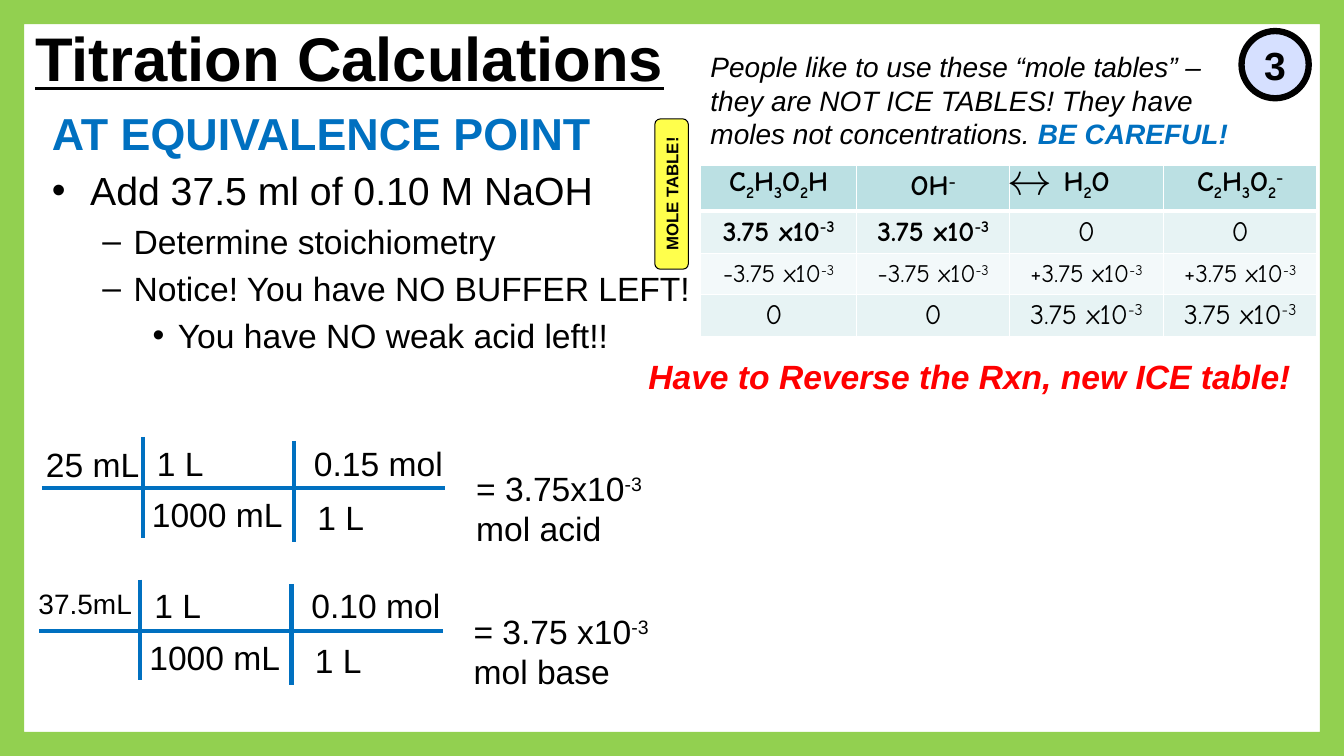
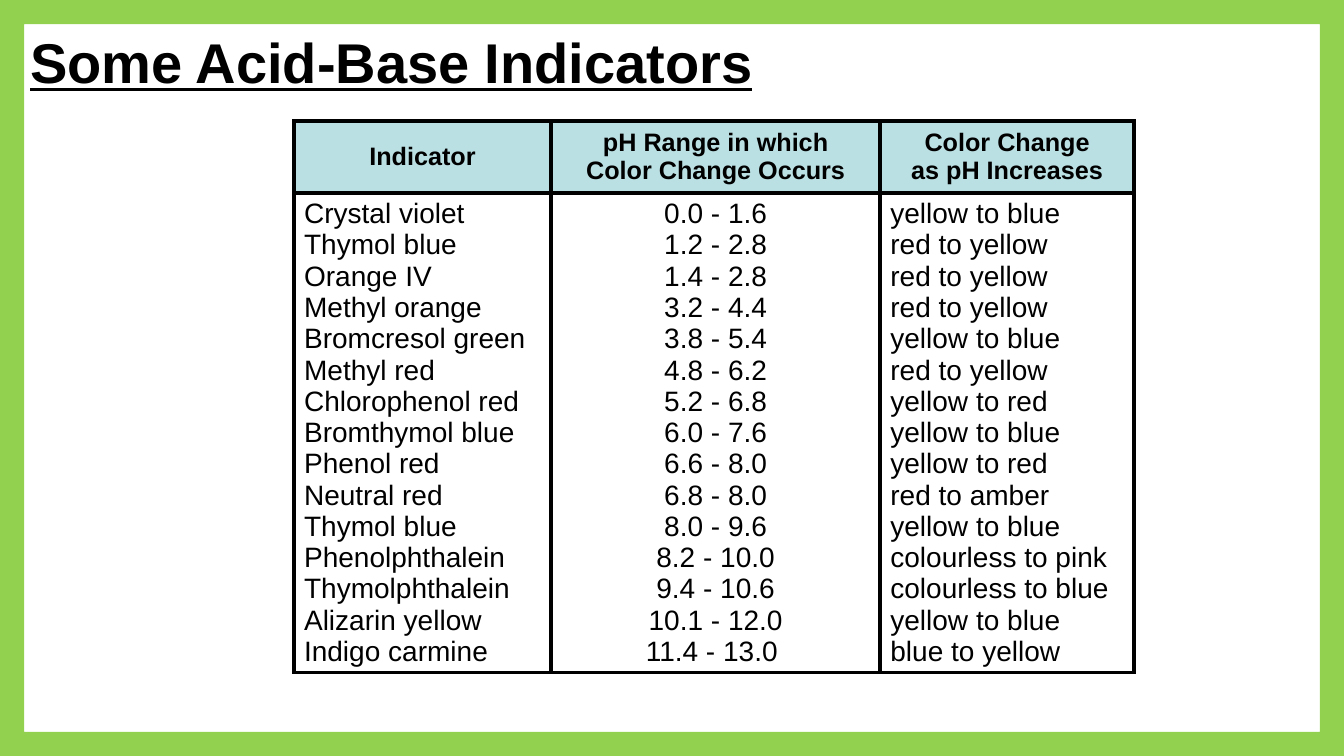
from lxml import etree
from pptx import Presentation
from pptx import util as u
from pptx.dml.color import RGBColor
from pptx.enum import shapes, text
from pptx.oxml.ns import qn

GREEN = RGBColor(0x92, 0xD0, 0x50)
BLUE = RGBColor(0x00, 0x70, 0xC0)
TEAL = RGBColor(0xBB, 0xE0, 0xE3)
PALE = RGBColor(0xE7, 0xF3, 0xF4)
PALER = RGBColor(0xF3, 0xF9, 0xFA)
LILAC = RGBColor(0xD6, 0xE0, 0xFF)
YELLOW = RGBColor(0xFF, 0xFF, 0x00)
RED = RGBColor(0xFF, 0x00, 0x00)
BLACK = RGBColor(0x00, 0x00, 0x00)
WHITE = RGBColor(0xFF, 0xFF, 0xFF)

CENTER = text.PP_ALIGN.CENTER
MIDDLE = text.MSO_ANCHOR.MIDDLE
TOP = text.MSO_ANCHOR.TOP
BASELINES = {"_": "-25000", "^": "30000"}

deck = Presentation()
deck.slide_width, deck.slide_height = u.Inches(13.333), u.Inches(7.5)
CELL = deck.slide_height / 90


def write(para, content, size, color=BLACK, name="Arial", **style):
    for index, piece in enumerate(content.split("~")):
        shift = BASELINES[piece[0]] if index % 2 else None
        for number, line in enumerate((piece[1:] if shift else piece).split("\n")):
            if number:
                para.add_line_break()
            if not line:
                continue
            span = para.add_run()
            span.text = line
            for key, value in {"size": u.Pt(size), "name": name, **style}.items():
                setattr(span.font, key, value)
            span.font.color.rgb = color
            if shift:
                span._r.get_or_add_rPr().set("baseline", shift)


def place(page, area, kind=None, fill=None, line=None):
    lengths = [round(cells * CELL) for cells in area]
    if kind is None:
        box = page.shapes.add_textbox(*lengths)
    else:
        box = page.shapes.add_shape(kind, *lengths)
        box.shadow.inherit = False
        box.fill.solid()
        box.fill.fore_color.rgb = fill
        if line:
            box.line.color.rgb, box.line.width = BLACK, u.Pt(line)
        else:
            box.line.fill.background()
    box.text_frame.word_wrap = True
    return box


titles = [
    ("Titration Calculations", 44, (3, 2.6, 108, 8.4)),
    ("Some Acid-Base Indicators", 40, (2.4, 2.3, 109, 10)),
]
pages = []
for title, size, area in titles:
    page = deck.slides.add_slide(deck.slide_layouts[6])
    frame = place(page, (0, 0, 160, 90), shapes.MSO_SHAPE.FRAME, GREEN)
    frame.adjustments[0] = 0.032
    heading = place(page, area).text_frame
    heading.vertical_anchor = MIDDLE
    write(heading.paragraphs[0], title, size, bold=True, underline=True)
    pages.append(page)
titration, indicators = pages

outline = [
    ("AT EQUIVALENCE POINT", 32, {"color": BLUE, "bold": True}, None),
    ("Add 37.5 ml of 0.10 M NaOH", 28, {}, (0, 0.38, 0.38, "•")),
    ("Determine stoichiometry", 24, {}, (1, 0.81, 0.31, "–")),
    ("Notice! You have NO BUFFER LEFT!", 24, {}, (1, 0.81, 0.31, "–")),
    ("You have NO weak acid left!!", 24, {}, (2, 1.25, 0.25, "•")),
]
body = place(titration, (5, 12, 129, 43.3)).text_frame
for index, (content, size, style, bullet) in enumerate(outline):
    para = body.add_paragraph() if index else body.paragraphs[0]
    if bullet:
        level, left, hanging, mark = bullet
        para.level = level
        para.space_before = u.Pt(5)
        properties = para._p.get_or_add_pPr()
        properties.set("marL", str(u.Inches(left)))
        properties.set("indent", str(-u.Inches(hanging)))
        etree.SubElement(properties, qn("a:buFont")).set("typeface", "Arial")
        etree.SubElement(properties, qn("a:buChar")).set("char", mark)
    write(para, content, size, **style)

AMOUNT = "3.75 x10~^-3~"
mole_rows = [
    (["C~_2~H~_3~O~_2~H", "OH~^−~", "H~_2~O", "C~_2~H~_3~O~_2~~^−~"], 20, TEAL, 4),
    ([AMOUNT, AMOUNT, "0", "0"], 20, PALE, 2),
    (["-" + AMOUNT, "-" + AMOUNT, "+" + AMOUNT, "+" + AMOUNT], 18, PALER, 0),
    (["0 ", "0", AMOUNT, AMOUNT], 20, PALE, 0),
]
indicator_rows = [
    ("Crystal violet", "0.0 - 1.6", "yellow to blue"),
    ("Thymol blue", "1.2 - 2.8", "red to yellow"),
    ("Orange IV", "1.4 - 2.8", "red to yellow"),
    ("Methyl orange", "3.2 - 4.4", "red to yellow"),
    ("Bromcresol green", "3.8 - 5.4", "yellow to blue"),
    ("Methyl red", "4.8 - 6.2", "red to yellow"),
    ("Chlorophenol red", "5.2 - 6.8", "yellow to red"),
    ("Bromthymol blue", "6.0 - 7.6", "yellow to blue"),
    ("Phenol red", "6.6 - 8.0", "yellow to red"),
    ("Neutral red", "6.8 - 8.0", "red to amber"),
    ("Thymol blue", "8.0 - 9.6", "yellow to blue"),
    ("Phenolphthalein", "8.2 - 10.0", "colourless to pink"),
    ("Thymolphthalein", "9.4 - 10.6", "colourless to blue"),
    ("Alizarin yellow", "10.1 - 12.0", "yellow to blue"),
    ("Indigo carmine", "11.4 - 13.0 ", "blue to yellow"),
]
headers = ["Indicator", "pH Range in which\nColor Change Occurs", "Color Change\nas pH Increases"]
indicator_table = [
    (headers, 18, TEAL, 3),
    (["\n".join(column) for column in zip(*indicator_rows)], 20, None, 0),
]
tables = [
    {"page": titration, "rows": mole_rows, "at": (83.4, 19.7), "font": "Comic Neue",
     "widths": [18.6, 18.2, 18.3, 18.3], "heights": [5.4, 5.05, 4.85, 5.05],
     "pitches": [23, 23, 22, 23], "header_anchor": TOP,
     "border": WHITE, "line": 1, "header_line": 3, "left_columns": ()},
    {"page": indicators, "rows": indicator_table, "at": (35, 14.4), "font": "Arial",
     "widths": [30.6, 39.2, 30.2], "heights": [8.6, 56.9],
     "pitches": [20, 22.33], "header_anchor": MIDDLE,
     "border": BLACK, "line": 3, "header_line": 3, "left_columns": (0, 2)},
]
for plan in tables:
    area = (*plan["at"], sum(plan["widths"]), sum(plan["heights"]))
    lengths = [round(cells * CELL) for cells in area]
    table = plan["page"].shapes.add_table(len(plan["heights"]), len(plan["widths"]), *lengths).table
    table.horz_banding = False
    for column, width in zip(table.columns, plan["widths"]):
        column.width = round(width * CELL)
    for row, (contents, size, fill, bold_count) in enumerate(plan["rows"]):
        table.rows[row].height = round(plan["heights"][row] * CELL)
        for column, content in enumerate(contents):
            cell = table.cell(row, column)
            cell.vertical_anchor = MIDDLE if row else plan["header_anchor"]
            para = cell.text_frame.paragraphs[0]
            para.line_spacing = u.Pt(plan["pitches"][row])
            if row == 0 or column not in plan["left_columns"]:
                para.alignment = CENTER
            write(para, content, size, name=plan["font"], bold=column < bold_count)
            if fill:
                cell.fill.solid()
                cell.fill.fore_color.rgb = fill
            else:
                cell.fill.background()
            properties = cell._tc.get_or_add_tcPr()
            for order, side in enumerate("LRTB"):
                on_header_edge = (row, side) in ((0, "B"), (1, "T"))
                width = plan["header_line"] if on_header_edge else plan["line"]
                border = etree.Element(qn("a:ln" + side), w=str(u.Pt(width)))
                solid = etree.SubElement(border, qn("a:solidFill"))
                etree.SubElement(solid, qn("a:srgbClr")).set("val", str(plan["border"]))
                properties.insert(order, border)

arrow = place(titration, (118.7, 17.5, 8, 7.7)).text_frame
write(arrow.paragraphs[0], "↔", 32, name="Comic Neue", bold=True)

warning = place(titration, (83.4, 5.3, 66.2, 13.3)).text_frame.paragraphs[0]
write(warning, "People like to use these “mole tables” – they are NOT ICE TABLES! "
      "They have moles not concentrations. ", 20, italic=True)
write(warning, "BE CAREFUL!", 20, BLUE, bold=True, italic=True)

reverse = place(titration, (76, 41.8, 81, 6)).text_frame.paragraphs[0]
write(reverse, "Have to Reverse the Rxn, new ICE table!", 24, RED, bold=True, italic=True)

conversions = [
    (5, 58.1, "25 mL", 24, -0.7, "0.15 mol", "= 3.75x10~^-3 ~mol acid"),
    (4.7, 75.1, "37.5mL", 20, -1.3, "0.10 mol", "= 3.75 x10~^-3 ~mol base"),
]
rails = [(0, 0, 48, 0), (12, -6.1, 12, 5.9), (30, -5.6, 30, 6.4)]
for left, middle, volume, volume_size, volume_shift, moles, result in conversions:
    for x1, y1, x2, y2 in rails:
        ends = [left + x1, middle + y1, left + x2, middle + y2]
        rail = titration.shapes.add_connector(
            shapes.MSO_CONNECTOR.STRAIGHT, *[round(cells * CELL) for cells in ends])
        rail.line.color.rgb, rail.line.width = BLUE, u.Pt(3)
        etree.SubElement(rail._element.spPr, qn("a:effectLst"))
    labels = [
        (volume, volume_size, volume_shift, -5.9, 17, 6),
        ("1000 mL", 24, 11.9, 0.1, 20, 6),
        ("1 L", 24, 12.5, -6, 20, 6),
        ("1 L", 24, 31.6, 0.5, 20, 6),
        (moles, 24, 31.2, -6, 20, 6),
        (result, 24, 50.5, -3, 25, 10.9),
    ]
    for content, size, x, y, width, height in labels:
        label = place(titration, (left + x, middle + y, width, height)).text_frame
        write(label.paragraphs[0], content, size)

badges = [
    ("3", 28, (147.8, 3.7, 8, 8), shapes.MSO_SHAPE.OVAL, LILAC, 4.5, 0, 100),
    ("MOLE TABLE!", 12, (71, 21.1, 17.9, 4), shapes.MSO_SHAPE.ROUNDED_RECTANGLE, YELLOW, 0.75, 270, 70),
]
for content, size, area, kind, fill, line, rotation, opacity in badges:
    badge = place(titration, area, kind, fill, line)
    badge.rotation = rotation
    badge.text_frame.vertical_anchor = MIDDLE
    para = badge.text_frame.paragraphs[0]
    para.alignment = CENTER
    write(para, content, size, bold=True)
    if opacity < 100:
        tint = badge._element.spPr.find(qn("a:solidFill")).find(qn("a:srgbClr"))
        etree.SubElement(tint, qn("a:alpha")).set("val", str(opacity * 1000))

deck.save("out.pptx")
